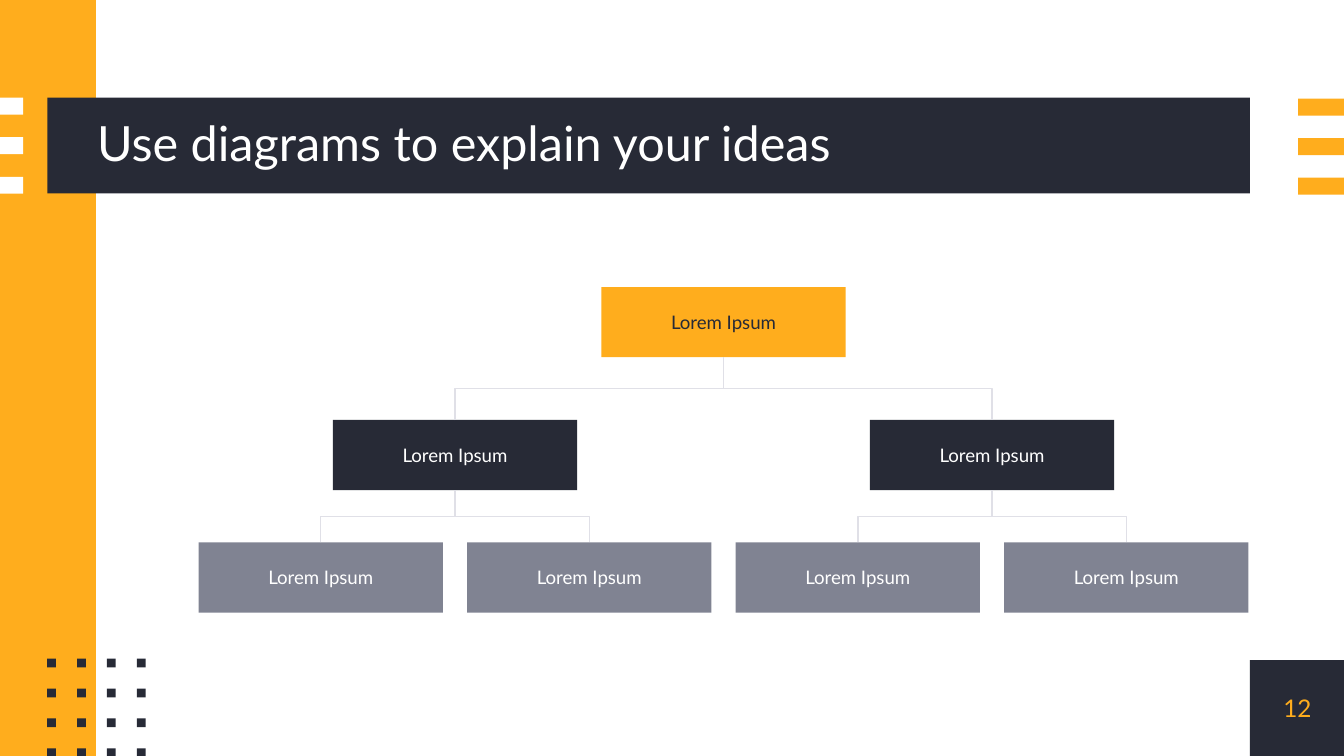
from pptx import Presentation
from pptx.dml.color import RGBColor
from pptx.enum import shapes, text
from pptx.oxml import ns, xmlchemy
from pptx.util import Pt

COLORS = {
    "amber": "FFAD1D",
    "navy": "272A36",
    "grey": "808392",
    "line": "E0E0E7",
    "white": "FFFFFF",
}
FONT = "Lato"
SLIDE_W, SLIDE_H = 720, 405
BANNER = (25.3, 52.3, 644.3, 51.4)
NUMBER_BOX = (669.6, 353.6, 50.8, 51.4)

# Chart grid: four columns, three levels
BOX_W, BOX_H = 130.9, 37.6
COL_LEFT, COL_STEP = 106.4, 143.85
LEVEL_TOPS = (153.8, 225, 290.6)


def rgb(name):
    return RGBColor.from_string(COLORS[name])


def add_rect(slide, left, top, width, height, color):
    sp = slide.shapes.add_shape(
        shapes.MSO_SHAPE.RECTANGLE, Pt(left), Pt(top), Pt(width), Pt(height))
    sp.shadow.inherit = False
    sp.fill.solid()
    sp.fill.fore_color.rgb = rgb(color)
    sp.line.fill.background()
    return sp


def set_text(sp, value, size, color, align, inset=0):
    tf = sp.text_frame
    tf.text = value
    tf.word_wrap = True
    tf.auto_size = text.MSO_AUTO_SIZE.NONE
    tf.vertical_anchor = text.MSO_ANCHOR.MIDDLE
    tf.margin_left = tf.margin_right = Pt(inset)
    tf.margin_top = tf.margin_bottom = Pt(inset)
    p = tf.paragraphs[0]
    p.alignment = align
    r = p.runs[0]
    r.font.name = FONT
    r.font.size = Pt(size)
    r.font.color.rgb = rgb(color)


def add_node(slide, column, level, fill, color):
    sp = add_rect(slide, COL_LEFT + column * COL_STEP, LEVEL_TOPS[level],
                  BOX_W, BOX_H, fill)
    set_text(sp, "Lorem Ipsum", 10, color, text.PP_ALIGN.CENTER, 7.2)
    return sp


def add_branch(slide, parent, child):
    """Join parent bottom to child top with an elbow that leaves vertically."""
    c = slide.shapes.add_connector(shapes.MSO_CONNECTOR.ELBOW, 0, 0, 0, 0)
    to_right = child.left > parent.left
    if to_right:
        c.begin_connect(parent, 2)
        c.end_connect(child, 0)
    else:
        c.begin_connect(child, 0)
        c.end_connect(parent, 2)

    # A vertical elbow is a horizontal one turned by 270 degrees
    bottom = parent.top + parent.height
    drop = child.top - bottom
    span = abs(child.left - parent.left)
    mid_x = (child.left + parent.left + parent.width) // 2
    c.left, c.top = mid_x - drop // 2, bottom + drop // 2 - span // 2
    c.width, c.height = drop, span
    xfrm = c._element.spPr.find(ns.qn("a:xfrm"))
    xfrm.set("rot", str(270 * 60000))
    xfrm.set("flipH", "1" if to_right else "0")
    xfrm.set("flipV", "0")

    c.line.color.rgb = rgb("line")
    c.line.width = Pt(0.75)
    c._element.spPr.append(xmlchemy.OxmlElement("a:effectLst"))


def add_decoration(slide):
    # Side band, title banner and number box
    add_rect(slide, 0, 0, 51.4, SLIDE_H, "amber")
    add_rect(slide, *BANNER, "navy")

    # Bars at both edges
    for i in range(3):
        add_rect(slide, 0, 52.3 + i * 21.2, 12.4, 9.1, "white")
        add_rect(slide, 695.4, 52.8 + i * 21.2, 24.6, 9.1, "amber")

    # Dot grid
    for row in range(4):
        for col in range(4):
            add_rect(slide, 25.3 + col * 16, 352.9 + row * 16, 4.7, 4.7, "navy")


def add_title(slide, value):
    sp = slide.shapes.title
    sp.left, sp.top, sp.width, sp.height = Pt(52), Pt(52.3), Pt(617.6), Pt(51.4)
    set_text(sp, value, 26, "white", text.PP_ALIGN.LEFT)
    sp.text_frame.paragraphs[0].line_spacing = 0.9
    slide.shapes._spTree.append(sp._element)  # in front of the banner


def add_tree(slide):
    root = add_node(slide, 1.5, 0, "amber", "navy")
    for column in (0.5, 2.5):
        branch = add_node(slide, column, 1, "navy", "white")
        add_branch(slide, root, branch)
        for offset in (-0.5, 0.5):
            leaf = add_node(slide, column + offset, 2, "grey", "white")
            add_branch(slide, branch, leaf)


def main():
    prs = Presentation()
    prs.slide_width, prs.slide_height = Pt(SLIDE_W), Pt(SLIDE_H)
    s = prs.slides.add_slide(prs.slide_layouts[5])
    add_decoration(s)
    add_title(s, "Use diagrams to explain your ideas")
    number = add_rect(s, *NUMBER_BOX, "navy")
    set_text(number, "12", 13, "amber", text.PP_ALIGN.CENTER)
    add_tree(s)
    prs.save("out.pptx")


if __name__ == "__main__":
    main()
